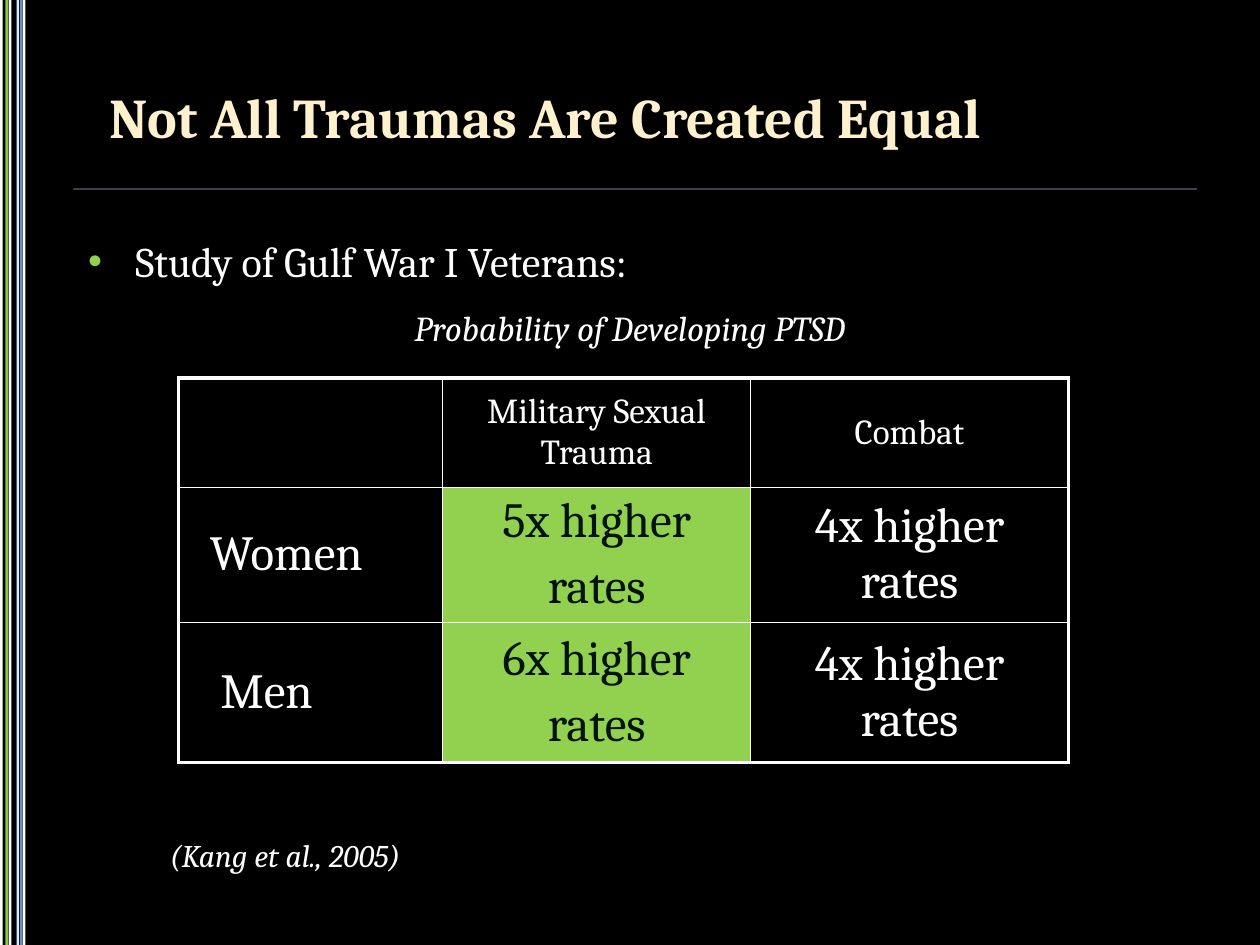
from lxml import etree
from pptx import Presentation
from pptx.dml.color import RGBColor
from pptx.enum.shapes import MSO_CONNECTOR, MSO_SHAPE
from pptx.enum.text import MSO_ANCHOR, MSO_AUTO_SIZE, PP_ALIGN
from pptx.oxml.ns import qn
from pptx.util import Pt

STRAIGHT = MSO_CONNECTOR.STRAIGHT
RECTANGLE = MSO_SHAPE.RECTANGLE
TOP, MIDDLE = MSO_ANCHOR.TOP, MSO_ANCHOR.MIDDLE
NO_FIT = MSO_AUTO_SIZE.NONE
LEFT, CENTER = PP_ALIGN.LEFT, PP_ALIGN.CENTER

BLACK = RGBColor(0x00, 0x00, 0x00)
WHITE = RGBColor(0xFF, 0xFF, 0xFF)
CREAM = RGBColor(0xFF, 0xF1, 0xCE)
GREEN = RGBColor(0x92, 0xD0, 0x50)
INK = RGBColor(0x03, 0x12, 0x10)
STRIPE_GREEN = RGBColor(0x7F, 0xD1, 0x3B)
PALE_BLUE = RGBColor(0xD6, 0xEC, 0xFF)
BLUE = RGBColor(0x73, 0x8A, 0xC8)
RULE_BLUE = RGBColor(0xC7, 0xD0, 0xE9)

FONT = "Cambria"
STRIPES = [(0, 1.5, WHITE), (5, 1.5, WHITE), (8, 0.9, BLACK),
           (9.5, 1.5, PALE_BLUE), (11.5, 1.5, BLUE), (13, 1.5, WHITE),
           (3, 1.5, STRIPE_GREEN)]
COLUMN_WIDTHS = [151, 176, 181.5]
ROW_HEIGHTS = [62.5, 74.5, 80]
HEADINGS = ["Military Sexual Trauma", "Combat"]
RATES = [("Women", 18, ["5x higher", "rates"], "4x higher rates"),
         ("Men", 24, ["6x higher", "rates"], "4x higher rates")]


def add_run(paragraph, text, size, color=WHITE, bold=False, italic=False):
    """Add one formatted run to a paragraph."""
    run = paragraph.add_run()
    run.text = text
    font = run.font
    font.name, font.size, font.bold, font.italic = FONT, Pt(size), bold, italic
    font.color.rgb = color


def place(holder, left, top, width, height, anchor):
    """Move a placeholder and return its prepared text frame."""
    holder.left, holder.top = Pt(left), Pt(top)
    holder.width, holder.height = Pt(width), Pt(height)
    frame = holder.text_frame
    frame.word_wrap = True
    frame.auto_size = NO_FIT
    frame.vertical_anchor = anchor
    frame.margin_left = frame.margin_right = Pt(14.4)
    frame.margin_top = frame.margin_bottom = Pt(14.4)
    return frame


def set_bullet(paragraph, indent, symbol=None):
    """Give a paragraph a hanging green bullet, or none."""
    properties = paragraph._p.get_or_add_pPr()
    properties.set("marL", str(Pt(indent)))
    properties.set("indent", str(-Pt(indent)))
    if symbol is None:
        etree.SubElement(properties, qn("a:buNone"))
        return
    color = etree.SubElement(properties, qn("a:buClr"))
    etree.SubElement(color, qn("a:srgbClr"), val=str(GREEN))
    etree.SubElement(properties, qn("a:buSzPct"), val="95000")
    etree.SubElement(properties, qn("a:buFont"), typeface="Arial")
    etree.SubElement(properties, qn("a:buChar"), char=symbol)


def add_stripe(slide, left, width, color, height):
    """Add one vertical stripe at the slide edge."""
    stripe = slide.shapes.add_shape(RECTANGLE, Pt(left), 0, Pt(width), height)
    stripe.shadow.inherit = False
    stripe.fill.solid()
    stripe.fill.fore_color.rgb = color
    stripe.line.fill.background()


def add_title_rule(slide):
    """Draw the thin translucent rule below the title."""
    rule = slide.shapes.add_connector(STRAIGHT, Pt(42), Pt(108), Pt(684), Pt(108))
    rule.line.width = Pt(0.5)
    rule.line.color.rgb = RULE_BLUE
    properties = rule._element.spPr
    color = properties.find(".//" + qn("a:srgbClr"))
    etree.SubElement(color, qn("a:alpha"), val="90000")
    etree.SubElement(properties, qn("a:effectLst"))


def set_borders(cell, row, column):
    """Draw thick outer and thin inner cell borders."""
    outer = {"L": column == 0, "R": column == len(COLUMN_WIDTHS) - 1,
             "T": row == 0, "B": row == len(ROW_HEIGHTS) - 1}
    properties = cell._tc.get_or_add_tcPr()
    for side, is_outer in outer.items():
        width = Pt(2.25 if is_outer else 1)
        border = etree.SubElement(properties, qn("a:ln" + side), w=str(width))
        fill = etree.SubElement(border, qn("a:solidFill"))
        etree.SubElement(fill, qn("a:srgbClr"), val=str(WHITE))


def fill_cell(cell, lines, size, color=WHITE, align=CENTER):
    """Write one paragraph per line into a table cell."""
    cell.vertical_anchor = MIDDLE
    for number, line in enumerate(lines):
        frame = cell.text_frame
        paragraph = frame.add_paragraph() if number else frame.paragraphs[0]
        paragraph.alignment = align
        paragraph.space_before = Pt(0.2 * size)
        add_run(paragraph, line, size, color)


def add_rates_table(slide):
    """Add the table of rates by sex and trauma type."""
    table = slide.shapes.add_table(
        len(ROW_HEIGHTS), len(COLUMN_WIDTHS), Pt(102), Pt(216),
        Pt(sum(COLUMN_WIDTHS)), Pt(sum(ROW_HEIGHTS))).table
    table.first_row = table.horz_banding = False
    for column, width in zip(table.columns, COLUMN_WIDTHS):
        column.width = Pt(width)
    for r, height in enumerate(ROW_HEIGHTS):
        table.rows[r].height = Pt(height)
        for c in range(len(COLUMN_WIDTHS)):
            cell = table.cell(r, c)
            set_borders(cell, r, c)
            if r and c == 1:
                cell.fill.solid()
                cell.fill.fore_color.rgb = GREEN
            else:
                cell.fill.background()
    for c, heading in enumerate(HEADINGS, start=1):
        fill_cell(table.cell(0, c), [heading], 20)
    for r, (group, inset, sexual_trauma, combat) in enumerate(RATES, start=1):
        group_cell = table.cell(r, 0)
        group_cell.margin_left = Pt(inset)
        fill_cell(group_cell, [group], 28, align=LEFT)
        fill_cell(table.cell(r, 1), sexual_trauma, 28, INK)
        fill_cell(table.cell(r, 2), [combat], 28)


def add_citation(slide):
    """Add the source citation below the table."""
    citation = slide.shapes.add_textbox(Pt(90), Pt(474), Pt(230), Pt(29))
    citation.text_frame.word_wrap = True
    add_run(citation.text_frame.paragraphs[0], "(Kang et al., 2005)", 18, italic=True)


def main():
    """Build and save the slide."""
    deck = Presentation()
    deck.slide_width, deck.slide_height = Pt(720), Pt(540)
    slide = deck.slides.add_slide(deck.slide_layouts[1])
    slide.background.fill.solid()
    slide.background.fill.fore_color.rgb = BLACK
    for left, width, color in STRIPES:
        add_stripe(slide, left, width, color, deck.slide_height)
    add_title_rule(slide)

    heading = place(slide.shapes.title, 48, 21.5, 635, 90, MIDDLE).paragraphs[0]
    heading.alignment = LEFT
    add_run(heading, "Not All Traumas Are Created Equal", 32, CREAM, bold=True)

    body = place(slide.placeholders[1], 36, 120, 648, 364, TOP)
    study = body.paragraphs[0]
    set_bullet(study, 27, "•")
    study.space_before = Pt(0)
    add_run(study, "Study of Gulf War I Veterans:", 24)
    caption = body.add_paragraph()
    set_bullet(caption, 27)
    caption.alignment = CENTER
    caption.space_before = Pt(12)
    add_run(caption, "Probability of Developing PTSD", 20, italic=True)

    add_rates_table(slide)
    add_citation(slide)
    deck.save("out.pptx")


if __name__ == "__main__":
    main()
